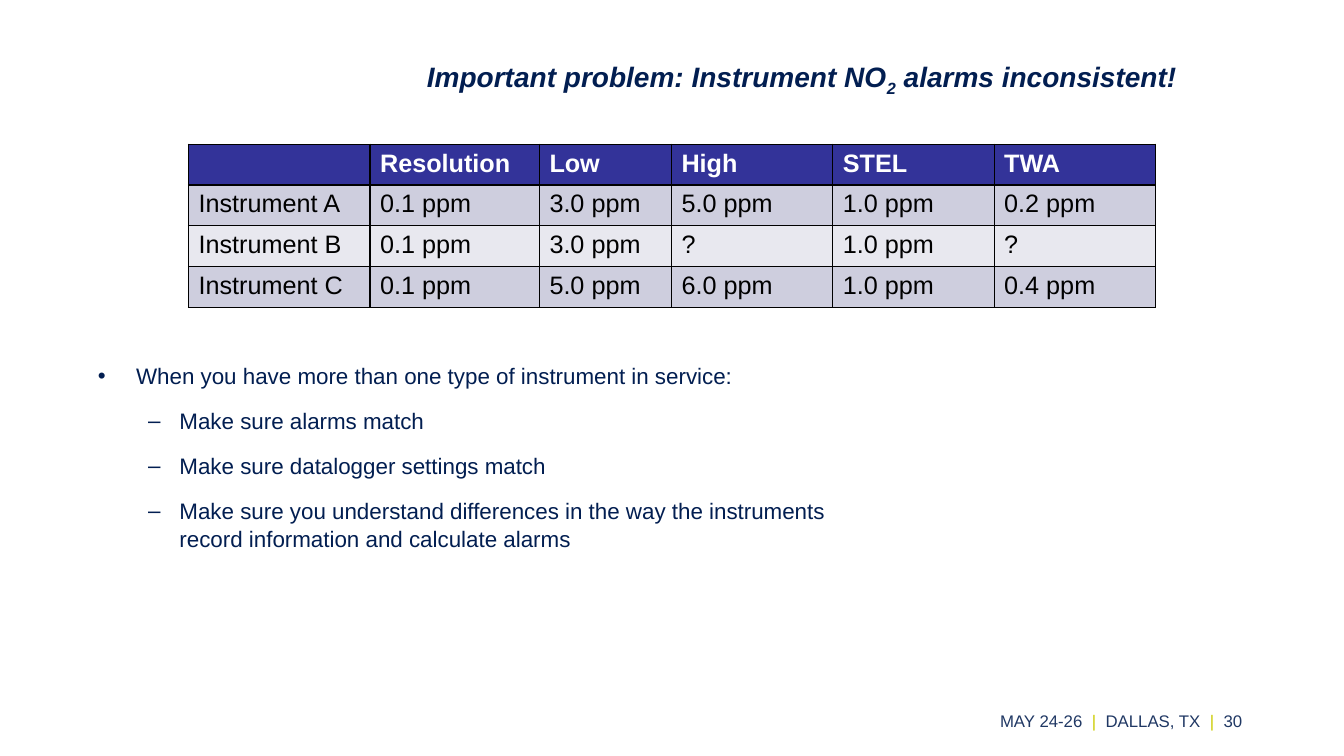
from pptx import Presentation
from pptx.util import Inches, Pt
from pptx.dml.color import RGBColor
from pptx.enum.text import PP_ALIGN, MSO_ANCHOR, MSO_AUTO_SIZE
from pptx.oxml import parse_xml
from pptx.oxml.ns import nsdecls

INK = {"navy": "021E51", "head": "333399", "dark": "CECEDE", "pale": "E8E8EF",
       "white": "FFFFFF", "black": "000000", "foot": "203864", "lime": "CCCC00"}

TITLE = [("Important problem: Instrument NO", 0), ("2", -25000),
         (" alarms inconsistent!", 0)]
ROWS = [
    ("", "Resolution", "Low", "High", "STEL", "TWA"),
    ("Instrument A", "0.1 ppm", "3.0 ppm", "5.0 ppm", "1.0 ppm", "0.2 ppm"),
    ("Instrument B", "0.1 ppm", "3.0 ppm", "?", "1.0 ppm", "?"),
    ("Instrument C", "0.1 ppm", "5.0 ppm", "6.0 ppm", "1.0 ppm", "0.4 ppm"),
]
POINTS = [
    (0, "When you have more than one type of instrument in service:"),
    (1, "Make sure alarms match"),
    (1, "Make sure datalogger settings match"),
    (1, "Make sure you understand differences in the way the instruments "
        "record information and calculate alarms"),
]
FOOT = [("MAY 24-26  ", "foot"), ("|", "lime"), ("  DALLAS, TX  ", "foot"),
        ("|  ", "lime"), ("30", "foot")]

WIDE, HIGH = 13.33, 7.5
COLS = (1.8, 1.68, 1.31, 1.6, 1.6, 1.6)
ROW = 0.405
BULLETS = (("•", 0.38, 0.38), ("–", 0.81, 0.31))
BOX = {"title": (0.6, 0.46, 11.17, 0.64), "grid": (1.87, 1.43, sum(COLS), ROW * len(ROWS)),
       "body": (0.87, 3.53, 7.99, 4.83), "foot": (9.42, 6.95, 3, 0.4)}


def inch(name):
    return [Inches(n) for n in BOX[name]]


def put(obj, **vals):
    for key, val in vals.items():
        setattr(obj, key, val)


def write(par, text, size, ink, **more):
    run = par.add_run()
    run.text = text
    put(run.font, name="Arial", size=Pt(size), **more)
    run.font.color.rgb = RGBColor.from_string(INK[ink])
    return run


def place(shape, name, anchor):
    put(shape, **dict(zip(("left", "top", "width", "height"), inch(name))))
    put(shape.text_frame, word_wrap=True, auto_size=MSO_AUTO_SIZE.NONE,
        vertical_anchor=anchor)
    return shape.text_frame


def edge(cell):
    props = cell._tc.get_or_add_tcPr()
    for side in "LRTB":
        props.append(parse_xml(
            f'<a:ln{side} {nsdecls("a")} w="12700"><a:solidFill>'
            f'<a:srgbClr val="{INK["black"]}"/></a:solidFill></a:ln{side}>'))


def add_title(slide):
    par = place(slide.shapes.title, "title", MSO_ANCHOR.MIDDLE).paragraphs[0]
    par.alignment = PP_ALIGN.RIGHT
    for text, base in TITLE:
        run = write(par, text, 20, "navy", bold=True, italic=True)
        if base:
            run.font._element.set("baseline", str(base))


def add_grid(slide):
    grid = slide.shapes.add_table(len(ROWS), len(COLS), *inch("grid")).table
    for col, wide in zip(grid.columns, COLS):
        col.width = Inches(wide)
    for r, row in enumerate(ROWS):
        grid.rows[r].height = Inches(ROW)
        fill = "head" if r == 0 else ("pale", "dark")[r % 2]
        for c, text in enumerate(row):
            cell = grid.cell(r, c)
            edge(cell)
            cell.fill.solid()
            cell.fill.fore_color.rgb = RGBColor.from_string(INK[fill])
            if text:
                write(cell.text_frame.paragraphs[0], text, 18,
                      "black" if r else "white", bold=r == 0)


def add_body(slide):
    frame = place(slide.placeholders[1], "body", MSO_ANCHOR.TOP)
    for i, (level, text) in enumerate(POINTS):
        par = frame.add_paragraph() if i else frame.paragraphs[0]
        mark, left, hang = BULLETS[level]
        props = par._p.get_or_add_pPr()
        props.set("marL", str(Inches(left)))
        props.set("indent", str(-Inches(hang)))
        for tag in ('buFont typeface="Arial"', f'buChar char="{mark}"'):
            props.append(parse_xml(f'<a:{tag} {nsdecls("a")}/>'))
        put(par, level=level, line_spacing=1.05, space_before=Pt(0), space_after=Pt(12))
        write(par, text, 16, "navy")


def add_foot(slide):
    box = slide.shapes.add_textbox(*inch("foot"))
    par = place(box, "foot", MSO_ANCHOR.MIDDLE).paragraphs[0]
    par.alignment = PP_ALIGN.RIGHT
    for text, ink in FOOT:
        write(par, text, 12, ink)


def main():
    deck = Presentation()
    put(deck, slide_width=Inches(WIDE), slide_height=Inches(HIGH))
    slide = deck.slides.add_slide(deck.slide_layouts[1])
    for add in (add_title, add_grid, add_body, add_foot):
        add(slide)
    deck.save("out.pptx")


if __name__ == "__main__":
    main()
